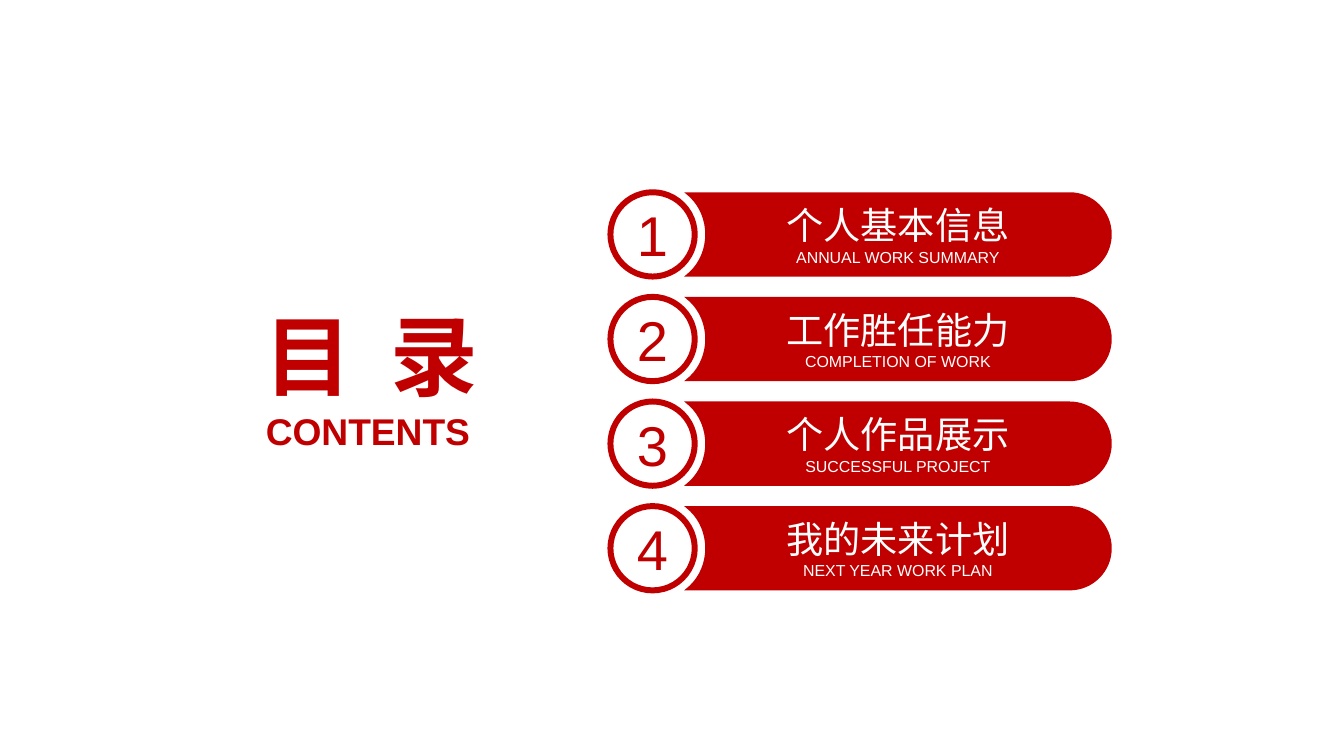
from lxml.etree import SubElement
from pptx import Presentation
from pptx.dml.color import RGBColor
from pptx.enum.shapes import MSO_SHAPE
from pptx.enum.text import MSO_ANCHOR, PP_ALIGN
from pptx.oxml.ns import qn
from pptx.util import Cm, Pt

COLORS = {"red": "C00000", "white": "FFFFFF"}
FONT = "Arial"

CHAPTERS = [
    ("个人基本信息", "ANNUAL WORK SUMMARY"),
    ("工作胜任能力", "COMPLETION OF WORK"),
    ("个人作品展示", "SUCCESSFUL PROJECT"),
    ("我的未来计划", "NEXT YEAR WORK PLAN"),
]

# Chapter geometry in cm
FIRST_CENTER, PITCH = 6.23, 2.78
HEIGHT = 2.24
BADGE_LEFT, BANNER_LEFT = 16.22, 18.18

# Banner outline: offsets from the middle of its left edge, in cm
BANNER_OUTLINE = [
    (0, -1.12), (10.24, -1.12),
    (10.86, -1.12), (11.36, -0.62), (11.36, 0),
    (11.36, 0.62), (10.86, 1.12), (10.24, 1.12),
    (0, 1.12), (0.15, 0.99),
    (0.41, 0.74), (0.56, 0.38), (0.56, 0),
    (0.56, -0.38), (0.41, -0.74), (0.15, -0.99),
]
CURVE_STARTS = (2, 5, 10, 13)  # each curve takes three outline points


def color(name):
    return RGBColor.from_string(COLORS[name])


def write_lines(frame, lines, ink, bold=False, anchor=MSO_ANCHOR.MIDDLE):
    """Fill a text frame with centred (text, size) lines."""
    frame.margin_left = frame.margin_right = 0
    frame.margin_top = frame.margin_bottom = 0
    frame.word_wrap = True
    frame.vertical_anchor = anchor
    for i, (text, size) in enumerate(lines):
        line = frame.paragraphs[0] if i == 0 else frame.add_paragraph()
        line.text = text
        line.alignment = PP_ALIGN.CENTER
        line.font.name = FONT
        line.font.size = Pt(size)
        line.font.bold = bold
        line.font.color.rgb = color(ink)


def round_outline(banner):
    """Turn each marked triple of straight segments into one Bézier curve."""
    outline = next(banner._element.iter(qn("a:path")))
    segments = list(outline)
    for start in CURVE_STARTS:
        curve = SubElement(outline, qn("a:cubicBezTo"))
        segments[start].addprevious(curve)
        for segment in segments[start:start + 3]:
            curve.append(segment[0])
            outline.remove(segment)


def add_banner(slide, center_y, title, subtitle):
    points = [(Cm(BANNER_LEFT + x), Cm(center_y + y)) for x, y in BANNER_OUTLINE]
    builder = slide.shapes.build_freeform(*points[0])
    builder.add_line_segments(points[1:], close=True)
    banner = builder.convert_to_shape()
    round_outline(banner)
    banner.shadow.inherit = False
    banner.fill.solid()
    banner.fill.fore_color.rgb = color("red")
    banner.line.fill.background()
    write_lines(banner.text_frame, [(title, 28), (subtitle, 12)], "white")


def add_badge(slide, center_y, number):
    badge = slide.shapes.add_shape(
        MSO_SHAPE.OVAL, Cm(BADGE_LEFT), Cm(center_y - HEIGHT / 2),
        Cm(HEIGHT), Cm(HEIGHT))
    badge.shadow.inherit = False
    badge.fill.solid()
    badge.fill.fore_color.rgb = color("white")
    badge.line.color.rgb = color("red")
    badge.line.width = Pt(4.5)
    write_lines(badge.text_frame, [(str(number), 42.2)], "red")


def add_heading(slide, left, top, height, text, size, anchor):
    heading = slide.shapes.add_textbox(Cm(left), Cm(top), Cm(7.95), Cm(height))
    write_lines(heading.text_frame, [(text, size)], "red", True, anchor)
    return heading


def main():
    prs = Presentation()
    prs.slide_width, prs.slide_height = Cm(35.71), Cm(20.09)
    slide = prs.slides.add_slide(prs.slide_layouts[6])

    # Chapters
    for i, (title, subtitle) in enumerate(CHAPTERS):
        center_y = FIRST_CENTER + i * PITCH
        add_banner(slide, center_y, title, subtitle)
        add_badge(slide, center_y, i + 1)

    # Heading, its two characters spread by letter spacing
    contents = add_heading(slide, 5.9, 8, 2.82, "目 录", 66, MSO_ANCHOR.MIDDLE)
    characters = contents.text_frame.paragraphs[0].runs[0]
    characters.font._element.set("spc", "700")
    add_heading(slide, 5.8, 10.85, 1.19, "CONTENTS", 28, MSO_ANCHOR.TOP)

    prs.save("out.pptx")


if __name__ == "__main__":
    main()
